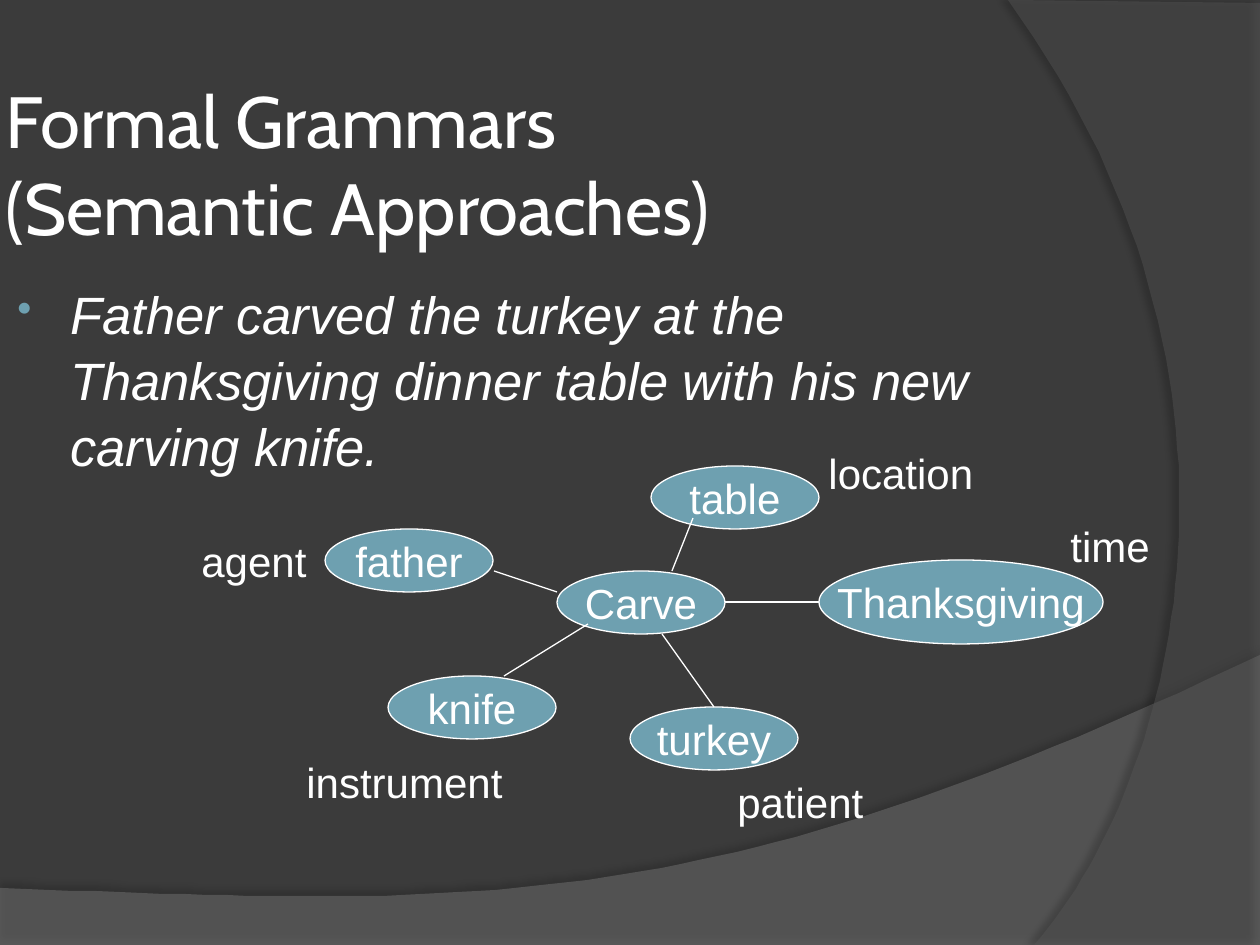
from lxml import etree
from pptx import Presentation
from pptx import util as u
from pptx.dml.color import RGBColor
from pptx.enum import shapes, text
from pptx.oxml.ns import qn

EMU_PER_PX = 914400 / 126
WHITE, TEAL = "FFFFFF", "6EA0B0"


def px(value):
    return u.Emu(round(value * EMU_PER_PX))


def color(value):
    return RGBColor.from_string(value)


def add_element(parent, tag, **attributes):
    element = etree.SubElement(parent, qn(tag))
    for name, value in attributes.items():
        element.set(name, str(value))
    return element


def bezier(start, control_1, control_2, end, steps=60):
    points = []
    for step in range(1, steps + 1):
        t = step / steps
        weights = ((1 - t) ** 3, 3 * t * (1 - t) ** 2, 3 * t * t * (1 - t), t ** 3)
        corners = (start, control_1, control_2, end)
        points.append(tuple(sum(w * c[axis] for w, c in zip(weights, corners)) for axis in (0, 1)))
    return points


class SlideBuilder:
    font, size, line_width = "Arial", 24, 0.75

    def __init__(self, slide):
        self.slide = slide
        self.canvas = slide.shapes

    def background(self, fill):
        self.slide.background.fill.solid()
        self.slide.background.fill.fore_color.rgb = color(fill)

    def start_group(self):
        self.canvas = self.slide.shapes.add_group_shape().shapes

    def run(self, paragraph, words, size=None, font=None, italic=False):
        run = paragraph.add_run()
        run.text = words
        run.font.size = u.Pt(size or self.size)
        run.font.name = font or self.font
        run.font.italic = italic
        run.font.color.rgb = color(WHITE)

    def swoosh(self, points, fill, opacity, shadow_opacity, distance, direction):
        builder = self.canvas.build_freeform(*points[0], scale=EMU_PER_PX)
        builder.add_line_segments(points[1:], close=True)
        shape = builder.convert_to_shape()
        shape.fill.solid()
        shape.fill.fore_color.rgb = color(fill)
        shape.line.fill.background()
        shape.shadow.inherit = False
        properties = shape._element.spPr
        fill_color = properties.find(qn("a:solidFill")).find(qn("a:srgbClr"))
        add_element(fill_color, "a:alpha", val=opacity * 1000)
        shadow = add_element(properties.find(qn("a:effectLst")), "a:outerShdw",
                             blurRad=u.Pt(4), dist=u.Pt(distance), dir=direction * 60000,
                             algn="ctr", rotWithShape=0)
        shadow_color = add_element(shadow, "a:srgbClr", val="000000")
        add_element(shadow_color, "a:alpha", val=shadow_opacity * 1000)

    def text_box(self, left, top, width, height):
        frame = self.canvas.add_textbox(*map(px, (left, top, width, height))).text_frame
        frame.word_wrap = True
        return frame

    def title(self, words, *box):
        frame = self.text_box(*box)
        frame.vertical_anchor = text.MSO_ANCHOR.MIDDLE
        frame.margin_left = frame.margin_right = px(6)
        frame.margin_top = frame.margin_bottom = px(6)
        self.run(frame.paragraphs[0], words, 41.4, "Cabin")

    def bullet(self, words, *box):
        paragraph = self.text_box(*box).paragraphs[0]
        paragraph.line_spacing = 1.05
        properties = paragraph._p.get_or_add_pPr()
        properties.set("marL", str(px(58)))
        properties.set("indent", str(px(-53)))
        add_element(add_element(properties, "a:buClr"), "a:srgbClr", val=TEAL)
        add_element(properties, "a:buSzPct", val=80000)
        add_element(properties, "a:buChar", char="•")
        self.run(paragraph, words, 30, italic=True)

    def node(self, words, left, top, width=168, height=63):
        shape = self.canvas.add_shape(shapes.MSO_SHAPE.OVAL, *map(px, (left, top, width, height)))
        shape.shadow.inherit = False
        shape.fill.solid()
        shape.fill.fore_color.rgb = color(TEAL)
        shape.line.color.rgb = color(WHITE)
        shape.line.width = u.Pt(self.line_width)
        frame = shape.text_frame
        frame.word_wrap = False
        frame.vertical_anchor = text.MSO_ANCHOR.MIDDLE
        frame.paragraphs[0].alignment = text.PP_ALIGN.CENTER
        self.run(frame.paragraphs[0], words)

    def link(self, *ends):
        connector = self.canvas.add_connector(shapes.MSO_CONNECTOR.STRAIGHT, *map(px, ends))
        connector.line.color.rgb = color(WHITE)
        connector.line.width = u.Pt(self.line_width)
        add_element(connector._element.spPr, "a:effectLst")

    def label(self, words, left, top, width):
        frame = self.text_box(left, top, width, 63)
        frame.word_wrap = False
        frame.auto_size = text.MSO_AUTO_SIZE.SHAPE_TO_FIT_TEXT
        self.run(frame.paragraphs[0], words)


def main():
    presentation = Presentation()
    presentation.slide_width, presentation.slide_height = px(1260), px(945)
    builder = SlideBuilder(presentation.slides.add_slide(presentation.slide_layouts[6]))
    builder.background("3B3B3B")

    lower_curve = bezier((1260, 655), (704, 919), (493, 906), (0, 888))
    builder.swoosh([(0, 888), (0, 946), (1260, 946), (1260, 655)] + lower_curve,
                   "7C7C7C", 45, 35, 3.5, 270)
    right_curve = bezier((1034, 945), (1178, 780), (1283, 378), (1008, 0))
    builder.swoosh([(1260, 3), (1260, 945), (1034, 945)] + right_curve,
                   "595959", 40, 45, 4, 180)

    builder.title("Formal Grammars (Semantic Approaches)", 0, 84, 819, 158)
    builder.bullet("Father carved the turkey at the Thanksgiving dinner table "
                   "with his new carving knife.", 0, 273, 1050, 567)

    builder.start_group()
    for node in (("Carve", 557, 571), ("father", 325, 529), ("knife", 388, 676),
                 ("turkey", 630, 707), ("Thanksgiving", 819, 560, 284, 84),
                 ("table", 651, 466)):
        builder.node(*node)
    for link in ((494, 571, 557, 592), (693, 518, 672, 571), (725, 602, 819, 602),
                 (588, 624, 504, 676), (662, 634, 714, 707)):
        builder.link(*link)
    for label in (("agent", 189, 529, 130), ("patient", 725, 770, 151),
                  ("time", 1058, 514, 105), ("location", 816, 441, 170),
                  ("instrument", 294, 750, 222)):
        builder.label(*label)

    presentation.save("out.pptx")


if __name__ == "__main__":
    main()
